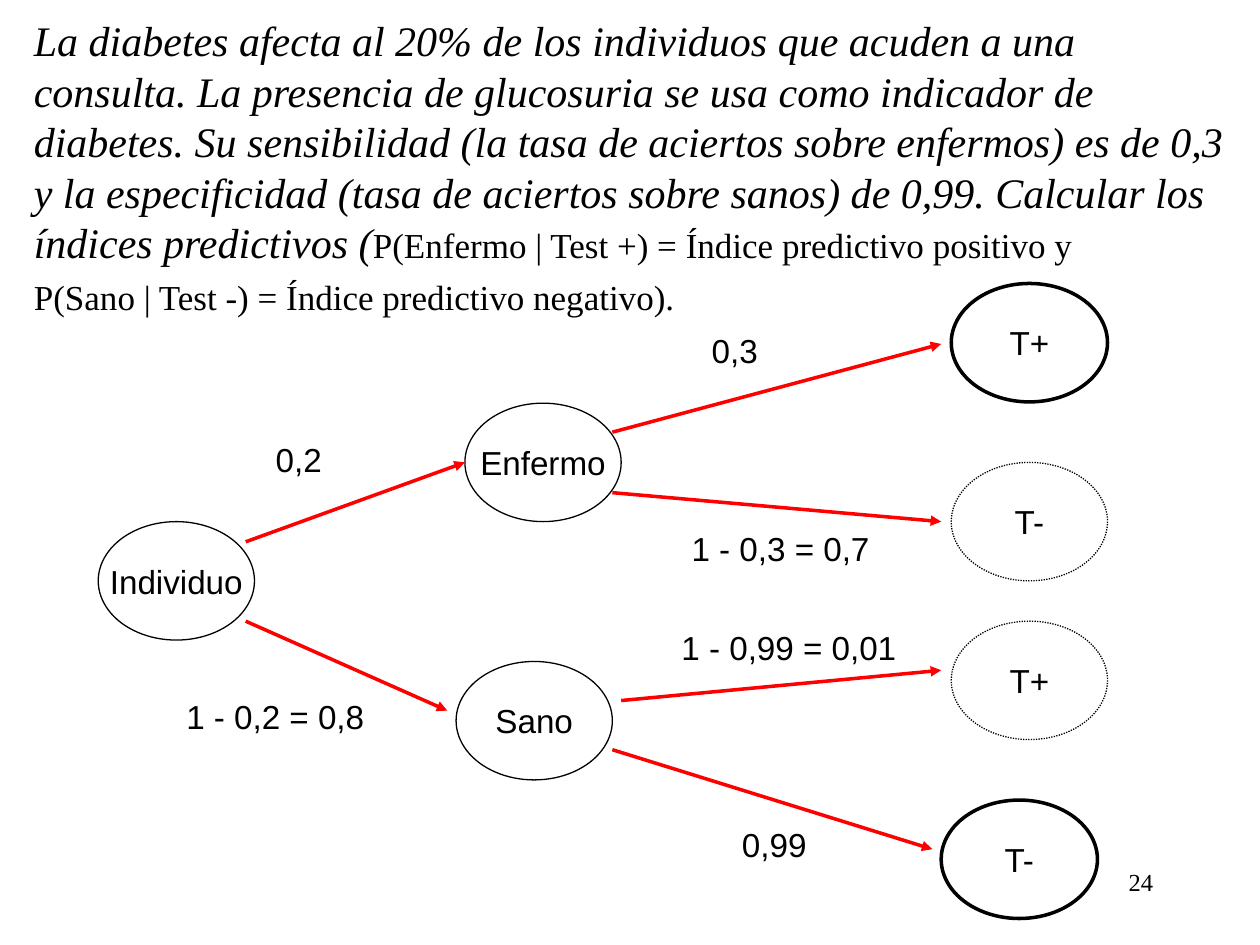
"""Build a probability tree slide for a diabetes screening test."""
from lxml.etree import SubElement
from pptx import Presentation
from pptx.dml.color import RGBColor
from pptx.enum.dml import MSO_LINE
from pptx.enum.shapes import MSO_CONNECTOR, MSO_SHAPE
from pptx.enum.text import MSO_ANCHOR, MSO_AUTO_SIZE, PP_ALIGN
from pptx.oxml.ns import qn
from pptx.util import Inches, Pt


def color(value):
    return RGBColor.from_string(value)


def style(run, size, font="Arial", italic=False):
    run.font.size = Pt(size)
    run.font.name = font
    run.font.italic = italic
    run.font.color.rgb = color("000000")


prs = Presentation()
prs.slide_width, prs.slide_height = Inches(10), Inches(7.5)
slide = prs.slides.add_slide(prs.slide_layouts[6])
shapes = slide.shapes

page_number = shapes.add_textbox(Inches(7.17), Inches(6.83), Inches(2.08), Inches(0.5))
page_number.text_frame.word_wrap = True
page_paragraph = page_number.text_frame.paragraphs[0]
page_paragraph.text = "24"
page_paragraph.alignment = PP_ALIGN.RIGHT
style(page_paragraph.runs[0], 14, "Times New Roman")

problem = [
    [("La diabetes afecta al 20% de los individuos que acuden a una consulta. "
      "La presencia de glucosuria se usa como indicador de diabetes. "
      "Su sensibilidad (la tasa de aciertos sobre enfermos) es de 0,3 "
      "y la especificidad (tasa de aciertos sobre sanos) de 0,99. "
      "Calcular los índices predictivos (", 24, True),
     ("P(Enfermo | Test +) = Índice predictivo positivo y", 20, False)],
    [("P(Sano | Test -) = Índice predictivo negativo).", 20, False)],
]
statement = shapes.add_textbox(Inches(0.17), Inches(0.07), Inches(9.72), Inches(2.83))
statement.text_frame.word_wrap = True
statement.text_frame.auto_size = MSO_AUTO_SIZE.SHAPE_TO_FIT_TEXT
for index, parts in enumerate(problem):
    paragraph = statement.text_frame.paragraphs[0] if index == 0 else statement.text_frame.add_paragraph()
    paragraph.space_before = Pt(4.8)
    for text, size, italic in parts:
        run = paragraph.add_run()
        run.text = text
        style(run, size, "Times New Roman", italic)

nodes = [
    ("Individuo", 0.78, 4.14, 0.75, None),
    ("Enfermo", 3.69, 3.2, 0.75, None),
    ("Sano", 3.62, 5.25, 0.75, None),
    ("T+", 7.55, 2.25, 2, None),
    ("T-", 7.55, 3.67, 0.75, MSO_LINE.ROUND_DOT),
    ("T+", 7.55, 4.93, 0.75, MSO_LINE.ROUND_DOT),
    ("T-", 7.47, 6.35, 2, None),
]
for name, left, top, weight, dash in nodes:
    node = shapes.add_shape(MSO_SHAPE.OVAL, Inches(left), Inches(top), Inches(1.24), Inches(0.94))
    node.shadow.inherit = False
    node.fill.background()
    node.line.color.rgb = color("000000")
    node.line.width = Pt(weight)
    if dash:
        node.line.dash_style = dash
    node.text_frame.word_wrap = False
    node.text_frame.vertical_anchor = MSO_ANCHOR.MIDDLE
    node_paragraph = node.text_frame.paragraphs[0]
    node_paragraph.text = name
    node_paragraph.alignment = PP_ALIGN.CENTER
    style(node_paragraph.runs[0], 19)

branches = [
    (1.95, 4.3, 3.69, 3.67, "0,2", 2.09, 3.44, 0.57),
    (1.95, 4.93, 3.55, 5.64, "1 - 0,2 = 0,8", 1.38, 5.48, 1.62),
    (4.86, 3.43, 7.47, 2.73, "0,3", 5.55, 2.57, 0.57),
    (4.86, 3.91, 7.47, 4.14, "1 - 0,3 = 0,7", 5.39, 4.14, 1.62),
    (4.93, 5.56, 7.47, 5.32, "1 - 0,99 = 0,01", 5.31, 4.93, 1.91),
    (4.86, 5.95, 7.4, 6.74, "0,99", 5.79, 6.49, 0.72),
]
for x1, y1, x2, y2, probability, left, top, width in branches:
    arrow = shapes.add_connector(MSO_CONNECTOR.STRAIGHT, Inches(x1), Inches(y1), Inches(x2), Inches(y2))
    arrow.line.color.rgb = color("FF0000")
    arrow.line.width = Pt(2)
    SubElement(arrow.line._get_or_add_ln(), qn("a:tailEnd"), type="triangle")
    SubElement(arrow._element.spPr, qn("a:effectLst"))

    label = shapes.add_textbox(Inches(left), Inches(top), Inches(width), Inches(0.42))
    label.text_frame.word_wrap = False
    label.text_frame.auto_size = MSO_AUTO_SIZE.SHAPE_TO_FIT_TEXT
    label.text_frame.text = probability
    style(label.text_frame.paragraphs[0].runs[0], 19)

prs.save("out.pptx")
